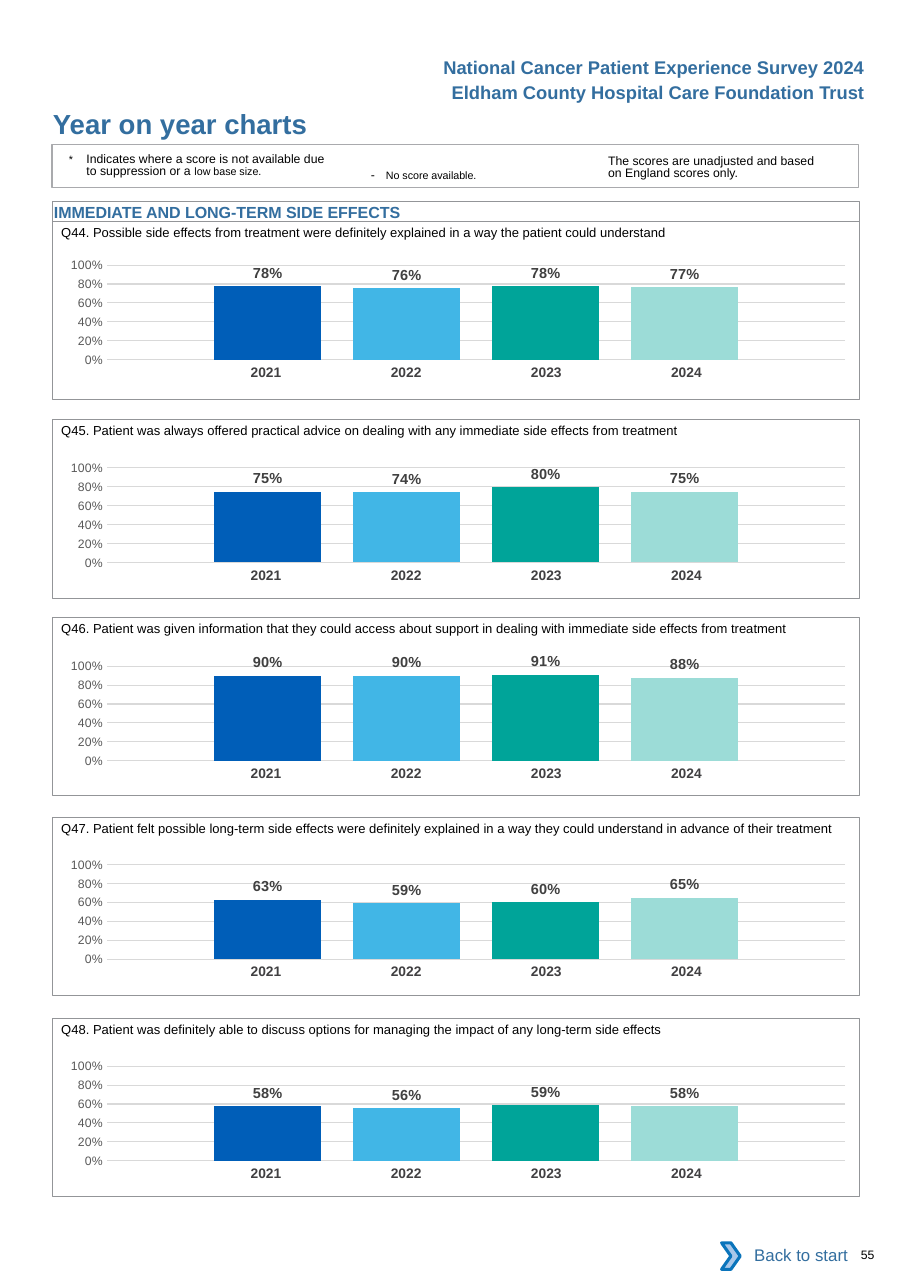
from dataclasses import dataclass
from lxml import etree
from pptx import Presentation
from pptx import util as u
from pptx.chart import data as chart_data
from pptx.dml.color import RGBColor
from pptx.enum import chart as chart_enum, shapes, text
from pptx.oxml import ns

Pt = u.Pt
LEFT, MIDDLE, RIGHT = text.PP_ALIGN.LEFT, text.PP_ALIGN.CENTER, text.PP_ALIGN.RIGHT


@dataclass(frozen=True)
class Theme:
    font: str = "Arial"
    heading: str = "336E9F"
    ink: str = "000000"
    border: str = "939598"
    legend_border: str = "A9AAAD"
    year: str = "414042"
    label: str = "404040"
    axis: str = "595959"
    grid: str = "D9D9D9"
    arrow_fill: str = "A8C7E9"
    arrow_line: str = "0A74BB"
    bars: tuple = ("005EB8", "41B6E6", "00A499", "9CDCD7")
    title_size: float = 18
    header_size: float = 12
    link_size: float = 11
    section_size: float = 10.5
    label_size: float = 9.5
    year_size: float = 9
    question_size: float = 8.5
    small_size: float = 8
    note_size: float = 7


THEME = Theme()
YEARS = ("2021", "2022", "2023", "2024")
PANEL_LEFT, PANEL_WIDTH, PANEL_HEIGHT = 34.4, 527, 116.6
NO_TABLE_STYLE = "{2D5ABB26-0587-4C30-8999-92F81FD0307C}"

# Panel top, chart top, question, score for each year
QUESTIONS = (
    (144.7, 159.8, "Q44. Possible side effects from treatment were definitely explained "
     "in a way the patient could understand", (0.78, 0.76, 0.78, 0.77)),
    (274.3, 292.3, "Q45. Patient was always offered practical advice on dealing with "
     "any immediate side effects from treatment", (0.75, 0.74, 0.80, 0.75)),
    (403.2, 421.9, "Q46. Patient was given information that they could access about support "
     "in dealing with immediate side effects from treatment", (0.90, 0.90, 0.91, 0.88)),
    (534.2, 551.5, "Q47. Patient felt possible long-term side effects were definitely explained "
     "in a way they could understand in advance of their treatment", (0.63, 0.59, 0.60, 0.65)),
    (665.3, 683.3, "Q48. Patient was definitely able to discuss options for managing "
     "the impact of any long-term side effects", (0.58, 0.56, 0.59, 0.58)),
)


def set_font(font, size, color, bold=False):
    font.name, font.size, font.bold = THEME.font, Pt(size), bold
    font.color.rgb = RGBColor.from_string(color)


def add_text(slide, box, wording, size, color=THEME.ink, bold=False, align=LEFT,
             hanging=0, line_spacing=None):
    """Add vertically centred text; wording is a string or (string, size) runs."""
    frame = slide.shapes.add_textbox(*map(Pt, box)).text_frame
    frame.margin_left = frame.margin_right = frame.margin_top = frame.margin_bottom = 0
    frame.word_wrap = True
    frame.vertical_anchor = text.MSO_ANCHOR.MIDDLE
    paragraph = frame.paragraphs[0]
    paragraph.alignment = align
    set_font(paragraph.font, size, color, bold)
    if line_spacing:
        paragraph.line_spacing = Pt(line_spacing)
    if hanging:
        properties = paragraph._p.get_or_add_pPr()
        properties.set("marL", str(Pt(hanging)))
        properties.set("indent", str(-Pt(hanging)))
    for part, part_size in [(wording, size)] if isinstance(wording, str) else wording:
        run = paragraph.add_run()
        run.text = part
        run.font.size = Pt(part_size)


def add_outline(slide, box, line, width, kind=shapes.MSO_SHAPE.RECTANGLE, fill=None):
    shape = slide.shapes.add_shape(kind, *map(Pt, box))
    shape.shadow.inherit = False
    shape.line.color.rgb = RGBColor.from_string(line)
    shape.line.width = Pt(width)
    if fill:
        shape.fill.solid()
        shape.fill.fore_color.rgb = RGBColor.from_string(fill)
    else:
        shape.fill.background()


def set_plot_area(chart, **fractions):
    area = chart._chartSpace.find(".//" + ns.qn("c:plotArea"))
    for old in area.findall(ns.qn("c:layout")):
        area.remove(old)
    layout = etree.Element(ns.qn("c:layout"))
    manual = etree.SubElement(layout, ns.qn("c:manualLayout"))
    settings = {"layoutTarget": "inner", "xMode": "edge", "yMode": "edge", **fractions}
    for name, value in settings.items():
        etree.SubElement(manual, ns.qn("c:" + name)).set("val", str(value))
    area.insert(0, layout)


def add_score_chart(slide, top, scores):
    data = chart_data.CategoryChartData(number_format="0%")
    data.categories = ["1"]
    for number, score in enumerate(scores, 1):
        data.add_series(f"Series {number}", [score])
    chart = slide.shapes.add_chart(chart_enum.XL_CHART_TYPE.COLUMN_CLUSTERED,
                                   Pt(28.1), Pt(top), Pt(527), Pt(92.9), data).chart
    chart.has_title = chart.has_legend = False
    set_font(chart.font, THEME.small_size, THEME.axis)
    set_plot_area(chart, x=0.08, y=0.145, w=0.915, h=0.666)
    chart.category_axis.visible = False

    axis = chart.value_axis
    axis.minimum_scale, axis.maximum_scale, axis.major_unit = 0, 1, 0.2
    axis.major_tick_mark = axis.minor_tick_mark = chart_enum.XL_TICK_MARK.NONE
    axis.format.line.fill.background()
    axis.tick_labels.number_format = "0%"
    axis.tick_labels.number_format_is_linked = False
    set_font(axis.tick_labels.font, THEME.small_size, THEME.axis)
    axis.major_gridlines.format.line.color.rgb = RGBColor.from_string(THEME.grid)
    axis.major_gridlines.format.line.width = Pt(0.75)

    plot = chart.plots[0]
    plot.gap_width, plot.overlap, plot.vary_by_categories = 200, -30, False
    for series, color in zip(plot.series, THEME.bars):
        series.format.fill.solid()
        series.format.fill.fore_color.rgb = RGBColor.from_string(color)
        labels = series.data_labels
        labels.show_value = True
        labels.position = chart_enum.XL_LABEL_POSITION.OUTSIDE_END
        labels.number_format, labels.number_format_is_linked = "0%", False
        set_font(labels.font, THEME.label_size, THEME.label, bold=True)


def add_year_table(slide, top):
    frame = slide.shapes.add_table(1, len(YEARS), Pt(128), Pt(top), Pt(366.4), Pt(19.4))
    frame._element.xpath(".//a:tableStyleId")[0].text = NO_TABLE_STYLE
    table = frame.table
    table.first_row = table.horz_banding = False
    for cell, year in zip(table.rows[0].cells, YEARS):
        cell.fill.background()
        cell.margin_left = cell.margin_right = cell.margin_top = cell.margin_bottom = 0
        cell.vertical_anchor = text.MSO_ANCHOR.MIDDLE
        cell.text = year
        paragraph = cell.text_frame.paragraphs[0]
        paragraph.alignment = MIDDLE
        set_font(paragraph.font, THEME.year_size, THEME.year, bold=True)


def add_question(slide, panel_top, chart_top, question, scores):
    add_score_chart(slide, chart_top, scores)
    add_year_table(slide, chart_top + 74.1)
    add_text(slide, (40, panel_top + 0.2, 521, 14), question, THEME.question_size)
    add_outline(slide, (PANEL_LEFT, panel_top, PANEL_WIDTH, PANEL_HEIGHT), THEME.border, 0.5)


def add_legend(slide):
    small, note = THEME.small_size, THEME.note_size
    add_outline(slide, (34, 94.3, PANEL_WIDTH, 28.1), THEME.legend_border, 0.75)
    add_text(slide, (45, 98.5, 172, 20),
             [("*\t", note), ("Indicates where a score is not available due to suppression or a ", small),
              ("low base size.", note)], small, hanging=11.5, line_spacing=8.1)
    add_text(slide, (242.4, 108.9, 110, 10), [("-\t", small), ("No score available.", note)],
             small, hanging=9.8)
    add_text(slide, (397.4, 99.8, 145, 20),
             "The scores are unadjusted and based on England scores only.", small, line_spacing=8.1)


def main():
    presentation = Presentation()
    presentation.slide_width, presentation.slide_height = Pt(594.72), Pt(841.68)
    slide = presentation.slides.add_slide(presentation.slide_layouts[6])

    # Page header and title
    for top, wording in ((36, "National Cancer Patient Experience Survey 2024"),
                         (52.3, "Eldham County Hospital Care Foundation Trust")):
        add_text(slide, (265, top, 300.2, 16), wording, THEME.header_size, THEME.heading, True, RIGHT)
    add_text(slide, (34.6, 69.8, 324, 22), "Year on year charts",
             THEME.title_size, THEME.heading, True)
    add_legend(slide)

    # Section heading and question panels
    add_outline(slide, (PANEL_LEFT, 131.8, PANEL_WIDTH, 13), THEME.border, 0.5)
    add_text(slide, (35.2, 132, PANEL_WIDTH, 13), "IMMEDIATE AND LONG-TERM SIDE EFFECTS",
             THEME.section_size, THEME.heading, True)
    for question in QUESTIONS:
        add_question(slide, *question)

    # Footer
    add_outline(slide, (471.6, 812.2, 12.2, 17.3), THEME.arrow_line, 2,
                shapes.MSO_SHAPE.CHEVRON, THEME.arrow_fill)
    add_text(slide, (484, 812, 70.2, 16), "Back to start", THEME.link_size, THEME.heading, align=RIGHT)
    add_text(slide, (562.6, 815, 20, 10), "55", THEME.small_size)
    presentation.save("out.pptx")


if __name__ == "__main__":
    main()
